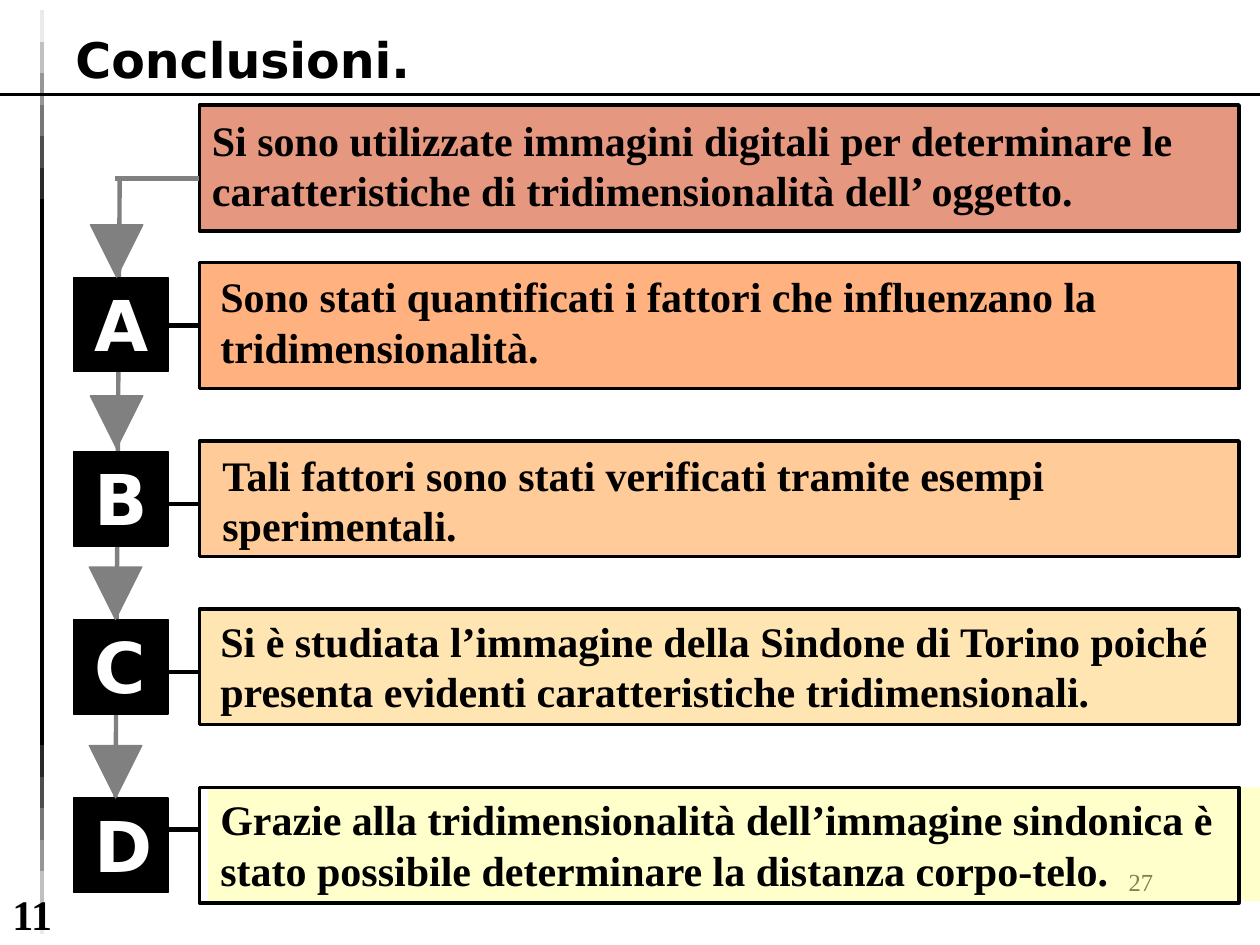
from dataclasses import dataclass
from typing import Optional

from lxml.etree import SubElement
from pptx import Presentation
from pptx.dml.color import RGBColor
from pptx.enum.shapes import MSO_CONNECTOR, MSO_SHAPE
from pptx.enum.text import MSO_ANCHOR, PP_ALIGN
from pptx.oxml.ns import qn
from pptx.util import Emu, Pt

PX = 7620  # 120 px to the inch

BLACK = RGBColor(0x00, 0x00, 0x00)
WHITE = RGBColor(0xFF, 0xFF, 0xFF)
GRAY = RGBColor(0x80, 0x80, 0x80)
RED = RGBColor(0xCC, 0x33, 0x00)
DARK_ORANGE = RGBColor(0xFF, 0x66, 0x00)
ORANGE = RGBColor(0xFF, 0x99, 0x33)
GOLD = RGBColor(0xFF, 0xCC, 0x66)
YELLOW = RGBColor(0xFF, 0xFF, 0x99)
FADE = [RGBColor.from_string(shade * 3) for shade in ("29", "4D", "77", "96", "C0", "EA")]

SERIF, SANS = "Times New Roman", "DejaVu Sans"
BODY = {"name": SERIF, "size": Pt(24), "bold": True}
TITLE = {"name": SANS, "size": Pt(28), "bold": True}
LETTER = {"name": SANS, "size": Pt(40), "bold": True}
NUMBER = {"name": SERIF, "size": Pt(14), "bold": False}


@dataclass(frozen=True)
class Box:
    left: int
    top: int
    width: int
    height: int

    def emu(self) -> list[Emu]:
        return [Emu(v * PX) for v in (self.left, self.top, self.width, self.height)]


@dataclass(frozen=True)
class Step:
    frame: Box
    fill: Optional[RGBColor]
    text_box: Box
    text: str


@dataclass(frozen=True)
class Badge:
    letter: str
    top: int
    link_y: int
    arrow_left: int
    arrow_top: int


STEPS = [
    Step(Box(190, 100, 990, 120), RED, Box(190, 103, 1110, 108),
         "Si sono utilizzate immagini digitali per determinare le "
         "caratteristiche di tridimensionalità dell’ oggetto."),
    Step(Box(190, 250, 990, 120), DARK_ORANGE, Box(198, 252, 942, 108),
         "Sono stati quantificati i fattori che influenzano la tridimensionalità."),
    Step(Box(190, 420, 990, 110), ORANGE, Box(200, 422, 940, 108),
         "Tali fattori sono stati verificati tramite esempi sperimentali."),
    Step(Box(190, 580, 990, 110), GOLD, Box(198, 580, 1002, 108),
         "Si è studiata l’immagine della Sindone di Torino poiché "
         "presenta evidenti caratteristiche tridimensionali."),
    Step(Box(190, 750, 990, 110), None, Box(198, 750, 1002, 108),
         "Grazie alla tridimensionalità dell’immagine sindonica è "
         "stato possibile determinare la distanza corpo-telo."),
]
BADGES = [
    Badge("A", 264, 310, 86, 214),
    Badge("B", 430, 480, 86, 377),
    Badge("C", 590, 640, 85, 540),
    Badge("D", 760, 790, 85, 710),
]


def add_line(page, start: tuple[int, int], end: tuple[int, int],
             color: RGBColor, width: float) -> None:
    points = [Emu(v * PX) for v in (*start, *end)]
    line = page.shapes.add_connector(MSO_CONNECTOR.STRAIGHT, *points)
    line.line.color.rgb = color
    line.line.width = Pt(width)
    SubElement(line._element.spPr, qn("a:effectLst"))


def add_block(page, box: Box, fill: Optional[RGBColor], line: Optional[RGBColor] = BLACK,
              width: float = 2, opacity: int = 100, kind=MSO_SHAPE.RECTANGLE):
    shape = page.shapes.add_shape(kind, *box.emu())
    shape.shadow.inherit = False
    if fill is None:
        shape.fill.background()
    else:
        shape.fill.solid()
        shape.fill.fore_color.rgb = fill
        if opacity < 100:
            color = shape._element.spPr.find(qn("a:solidFill"))[0]
            SubElement(color, qn("a:alpha"), val=str(opacity * 1000))
    if line is None:
        shape.line.fill.background()
    else:
        shape.line.color.rgb = line
        shape.line.width = Pt(width)
    return shape


def write(shape, text: str, style: dict, color: RGBColor = BLACK,
          align=PP_ALIGN.LEFT, wrap: bool = True) -> None:
    frame = shape.text_frame
    frame.word_wrap = wrap
    frame.vertical_anchor = MSO_ANCHOR.TOP
    para = frame.paragraphs[0]
    para.alignment = align
    span = para.add_run()
    span.text = text
    for key, value in style.items():
        setattr(span.font, key, value)
    span.font.color.rgb = color


def add_text(page, box: Box, text: str, style: dict, **options) -> None:
    write(page.shapes.add_textbox(*box.emu()), text, style, **options)


def add_step(page, step: Step) -> None:
    if step.fill is None:
        # The last step has its tint on the text, under an open frame
        tint = add_block(page, step.text_box, YELLOW, None, opacity=50)
        write(tint, step.text, BODY)
        add_block(page, step.frame, None)
    else:
        add_block(page, step.frame, step.fill, opacity=50)
        add_text(page, step.text_box, step.text, BODY)


def add_badge(page, badge: Badge) -> None:
    add_line(page, (160, badge.link_y), (190, badge.link_y), BLACK, 2.5)
    add_block(page, Box(70, badge.top, 90, 90), BLACK, width=0.75)
    add_text(page, Box(78, badge.top - 2, 112, 92), badge.letter, LETTER, color=WHITE)
    arrow = add_block(page, Box(badge.arrow_left, badge.arrow_top, 50, 50), GRAY, GRAY,
                      0.75, kind=MSO_SHAPE.ISOSCELES_TRIANGLE)
    arrow.rotation = 180


def add_margin_rule(page) -> None:
    for index, shade in enumerate(FADE):
        upper, lower = 190 - 30 * index, 710 + 30 * index
        add_line(page, (40, upper), (40, upper - 30), shade, 1.75)
        add_line(page, (40, lower + 30), (40, lower), shade, 1.75)
    add_line(page, (40, 190), (40, 710), BLACK, 1.75)


def main() -> None:
    deck = Presentation()
    deck.slide_width, deck.slide_height = Emu(1200 * PX), Emu(900 * PX)
    page = deck.slides.add_slide(deck.slide_layouts[6])

    # Slide number, beneath the tinted last step
    add_text(page, Box(860, 820, 250, 60), "27", NUMBER, align=PP_ALIGN.RIGHT)

    # Conclusions
    for step in STEPS:
        add_step(page, step)

    # Title and rules
    add_text(page, Box(60, 22, 956, 68), "Conclusioni.", TITLE)
    add_margin_rule(page)
    add_line(page, (0, 90), (1200, 90), BLACK, 1.75)
    add_text(page, Box(0, 840, 64, 60), "11", BODY, wrap=False)

    # Path from the first step down through the letters
    add_line(page, (110, 170), (190, 170), GRAY, 2.5)
    add_line(page, (110, 760), (114, 170), GRAY, 2.5)
    for badge in BADGES:
        add_badge(page, badge)

    deck.save("out.pptx")


if __name__ == "__main__":
    main()
